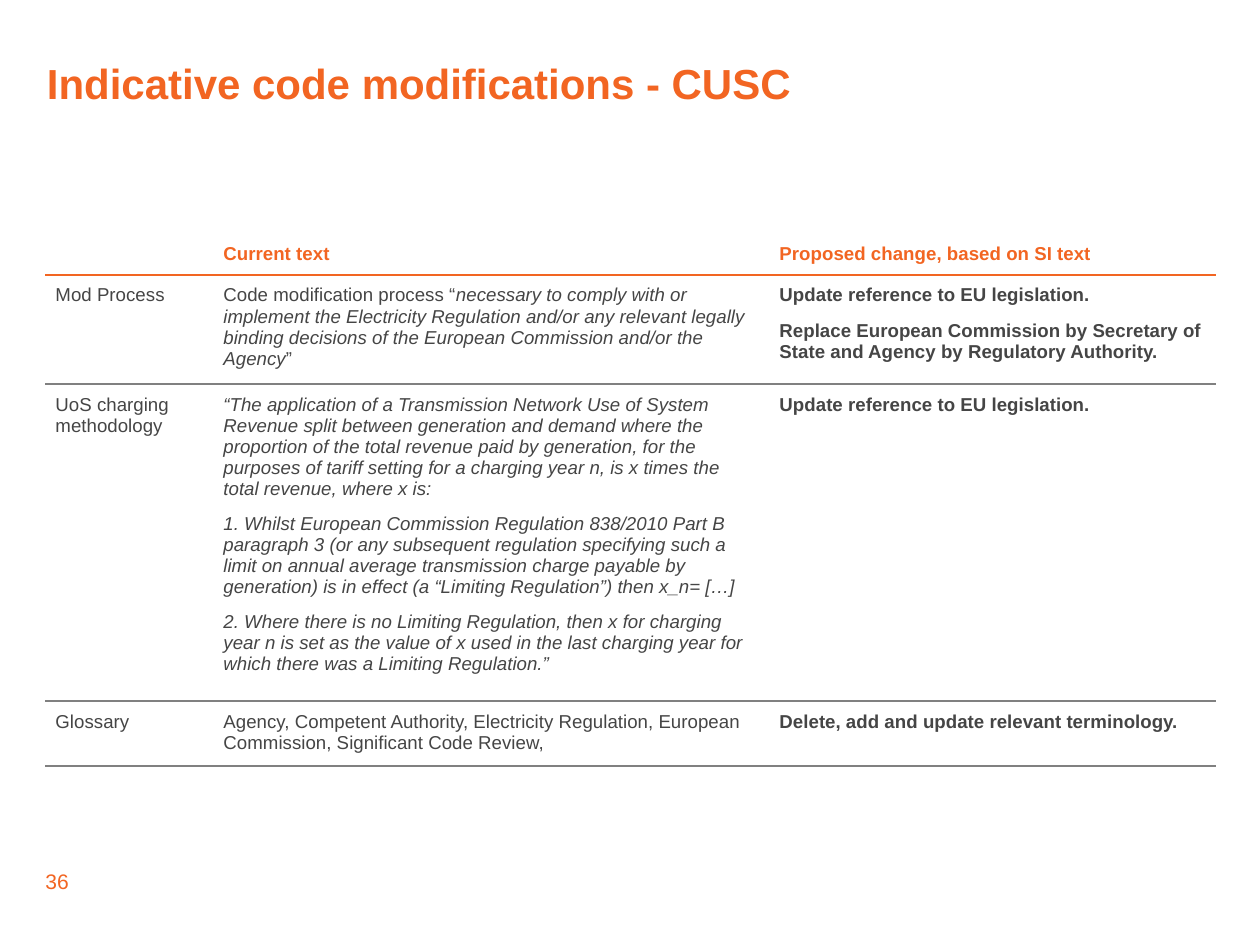
from dataclasses import dataclass

from lxml import etree
from pptx import Presentation, util as u
from pptx.dml import color
from pptx.enum import text
from pptx.oxml import ns


@dataclass(frozen=True)
class Theme:
    font: str = "Arial"
    orange: str = "F26522"
    grey: str = "454545"
    rule: str = "808080"
    title_size: int = 18
    number_size: int = 9
    table_size: int = 8


theme = Theme()


def write(frame, paragraphs, size=theme.table_size, fill=theme.grey, bold=False,
          line=1.0, after=0, anchor=text.MSO_ANCHOR.TOP, margin=0.0):
    """Fill a text frame or cell; each paragraph is a list of (words, italic) runs."""
    frame.margin_left = frame.margin_right = u.Inches(margin)
    frame.margin_top = frame.margin_bottom = u.Inches(margin)
    frame.vertical_anchor = anchor
    body = getattr(frame, "text_frame", frame)
    body.word_wrap = True
    for index, runs in enumerate(paragraphs):
        paragraph = body.add_paragraph() if index else body.paragraphs[0]
        paragraph.line_spacing = line
        paragraph.space_after = u.Pt(after)
        for words, italic in runs:
            run = paragraph.add_run()
            run.text = words
            run.font.name = theme.font
            run.font.size = u.Pt(size)
            run.font.bold = bold
            run.font.italic = italic
            run.font.color.rgb = color.RGBColor.from_string(fill)
        if not runs:
            end = etree.SubElement(paragraph._p, ns.qn("a:endParaRPr"))
            end.set("sz", str(size * 100))


def add_border(cell, side, rgb):
    """Draw one side of a cell as a 1 pt line."""
    border = etree.Element(ns.qn(f"a:{side}"), w=str(u.Pt(1)))
    solid = etree.SubElement(border, ns.qn("a:solidFill"))
    etree.SubElement(solid, ns.qn("a:srgbClr"), val=rgb)
    properties = cell._tc.get_or_add_tcPr()
    position = len(properties.findall(ns.qn("a:lnT")))
    properties.insert(position, border)


# Slide in the 4:3 format
presentation = Presentation()
presentation.slide_width = u.Inches(7.5)
presentation.slide_height = presentation.slide_width * 3 // 4
slide = presentation.slides.add_slide(presentation.slide_layouts[6])

# Title and page number
title = slide.shapes.add_textbox(u.Inches(0.28), u.Inches(0.4), u.Inches(6.93), u.Inches(0.32))
write(title.text_frame, [[("Indicative code modifications - CUSC", False)]],
      size=theme.title_size, fill=theme.orange, bold=True, line=0.8)
number = slide.shapes.add_textbox(u.Inches(0.27), u.Inches(5.17), u.Inches(0.69), u.Inches(0.15))
write(number.text_frame, [[("36", False)]], size=theme.number_size, fill=theme.orange)

# Table content: rows of cells, each cell a list of paragraphs
rows = [
    [
        [[]],
        [[("Current text", False)]],
        [[("Proposed change, based on SI text", False)]],
    ],
    [
        [[("Mod Process", False)]],
        [[
            ("Code modification process “", False),
            ("necessary to comply with or implement the Electricity Regulation and/or any "
             "relevant legally binding decisions of the European Commission and/or the Agency", True),
            ("”", False),
        ]],
        [
            [("Update reference to EU legislation.", False)],
            [("Replace European Commission by Secretary of State and Agency by "
              "Regulatory Authority.", False)],
        ],
    ],
    [
        [[("UoS charging methodology", False)]],
        [
            [("“The application of a Transmission Network Use of System Revenue split between "
              "generation and demand where the proportion of the total revenue paid by generation, "
              "for the purposes of tariff setting for a charging year n, is x times the total "
              "revenue, where x is:", True)],
            [("1. Whilst European Commission Regulation 838/2010 Part B paragraph 3 (or any "
              "subsequent regulation specifying such a limit on annual average transmission charge "
              "payable by generation) is in effect (a “Limiting Regulation”) then x_n= […]", True)],
            [("2. Where there is no Limiting Regulation, then x for charging year n is set as the "
              "value of x used in the last charging year for which there was a Limiting "
              "Regulation.”", True)],
        ],
        [[("Update reference to EU legislation.", False)]],
    ],
    [
        [[("Glossary", False)]],
        [[("Agency, Competent Authority, Electricity Regulation, European Commission, "
           "Significant Code Review,", False)]],
        [[("Delete, add and update relevant terminology.", False)]],
    ],
]
column_widths = [1, 3.31, 2.66]
row_heights = [0.26, 0.62, 1.79, 0.37]

# Table frame, with the plain style that has no grid
table = slide.shapes.add_table(
    len(rows), len(column_widths), u.Inches(0.27), u.Inches(1.37),
    u.Inches(sum(column_widths)), u.Inches(sum(row_heights))).table
table.horz_banding = False
table._tbl.tblPr.find(ns.qn("a:tableStyleId")).text = "{2D5ABB26-0587-4C30-8999-92F81FD0307C}"
for column, width in zip(table.columns, column_widths):
    column.width = u.Inches(width)
for row, height in zip(table.rows, row_heights):
    row.height = u.Inches(height)

# Cells: orange header, bold last column, a rule under each row
for row_index, row in enumerate(rows):
    header = row_index == 0
    for column_index, paragraphs in enumerate(row):
        cell = table.cell(row_index, column_index)
        cell.fill.background()
        write(cell, paragraphs,
              fill=theme.orange if header else theme.grey,
              bold=header or column_index == 2,
              line=1.1 if header else 1.0,
              after=6 if column_index else 0,
              anchor=text.MSO_ANCHOR.BOTTOM if header else text.MSO_ANCHOR.TOP,
              margin=0.06)
        if not header:
            add_border(cell, "lnT", theme.orange if row_index == 1 else theme.rule)
        add_border(cell, "lnB", theme.orange if header else theme.rule)

presentation.save("out.pptx")
